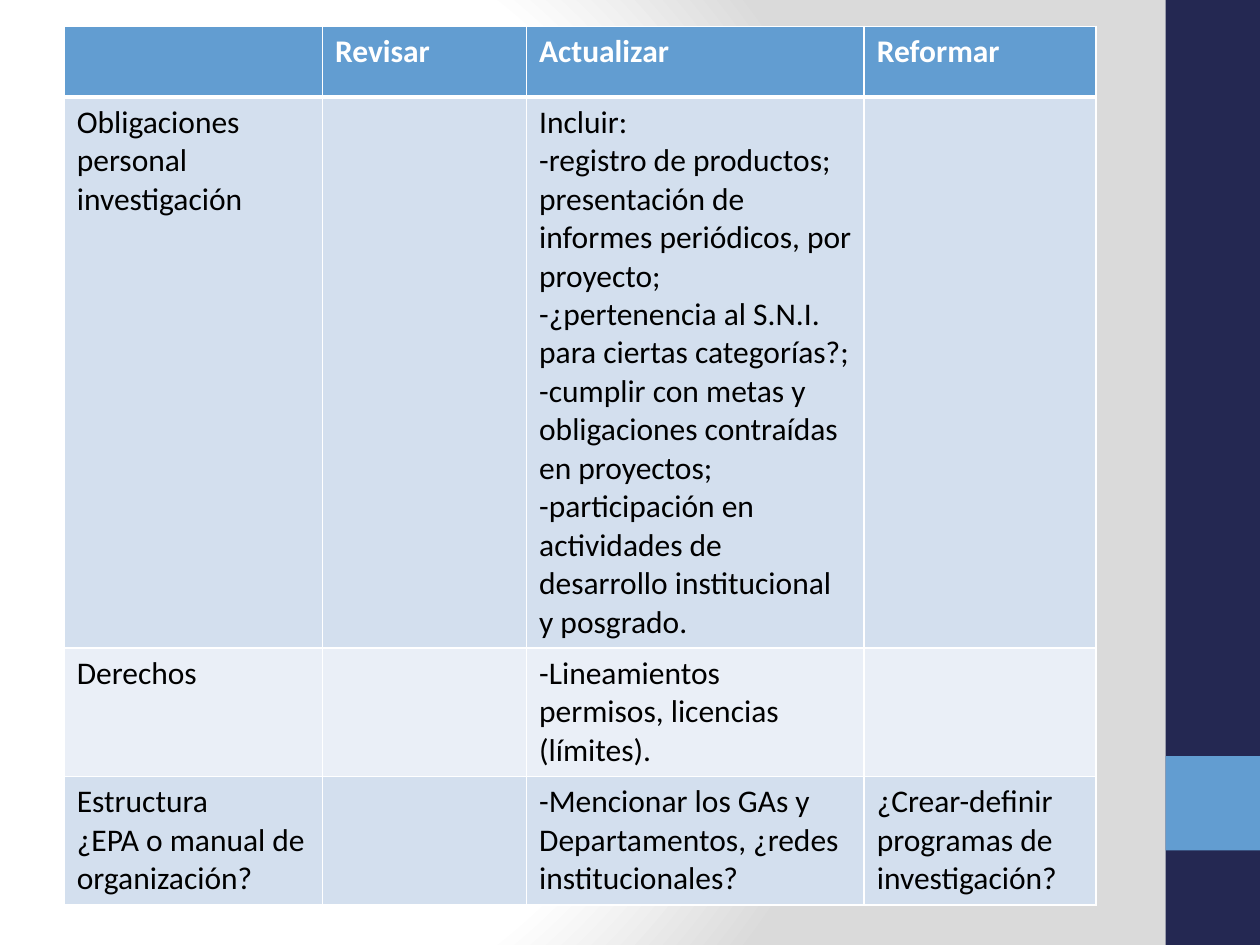
from pptx import Presentation
from pptx.dml.color import RGBColor
from pptx.enum.shapes import MSO_SHAPE
from pptx.oxml import parse_xml
from pptx.oxml.ns import nsdecls
from pptx.util import Inches, Pt

RECTANGLE = MSO_SHAPE.RECTANGLE
NAVY = RGBColor(0x24, 0x28, 0x52)
BLUE = RGBColor(0x62, 0x9D, 0xD1)
BAND_DARK = RGBColor(0xD3, 0xDF, 0xEE)
BAND_LIGHT = RGBColor(0xEA, 0xEF, 0xF7)
WHITE = RGBColor(0xFF, 0xFF, 0xFF)
BLACK = RGBColor(0, 0, 0)
GREY = RGBColor(0xDA, 0xDA, 0xDA)

WIDTH, HEIGHT = 10, 7.5
BAR = 0.75
BARS = [(0, HEIGHT, NAVY), (HEIGHT - 2 * BAR, BAR, BLUE)]

LEFT, TOP = 0.51, 0.21
COLUMNS = [2.05, 1.62, 2.68, 1.84]
ROWS = [0.56, 3.78, 1.02, 1.02]
# Each cell is a list of paragraphs.
CELLS = [
    [[], ["Revisar"], ["Actualizar"], ["Reformar"]],
    [["Obligaciones personal investigación"], [],
     ["Incluir:",
      "-registro de productos; presentación de informes periódicos, por proyecto;",
      "-¿pertenencia al S.N.I. para ciertas categorías?;",
      "-cumplir con metas y obligaciones contraídas en proyectos;",
      "-participación en actividades de desarrollo institucional y posgrado."], []],
    [["Derechos"], [], ["-Lineamientos permisos, licencias (límites)."], []],
    [["Estructura", "¿EPA o manual de organización?"], [],
     ["-Mencionar los GAs y Departamentos, ¿redes institucionales?"],
     ["¿Crear-definir programas de investigación?"]],
]


def set_background(slide):
    stops = "".join(f'<a:gs pos="{pos * 1000}"><a:srgbClr val="{color}"/></a:gs>'
                    for pos, color in [(0, WHITE), (75, WHITE), (100, GREY)])
    slide.element.cSld.insert(0, parse_xml(
        f'<p:bg {nsdecls("p", "a")}><p:bgPr><a:gradFill rotWithShape="1">'
        f'<a:gsLst>{stops}</a:gsLst><a:path path="circle">'
        '<a:fillToRect l="20000" t="50000" r="100000" b="50000"/></a:path>'
        '</a:gradFill><a:effectLst/></p:bgPr></p:bg>'))


def add_bar(slide, top, height, color):
    sp = slide.shapes.add_shape(RECTANGLE, Inches(WIDTH - BAR), Inches(top),
                                Inches(BAR), Inches(height))
    sp.shadow.inherit = False
    sp.fill.solid()
    sp.fill.fore_color.rgb = color
    sp.line.fill.background()


def write(tf, paragraphs, color=BLACK, bold=False, size=18, font="Calibri"):
    for i, text in enumerate(paragraphs):
        p = tf.add_paragraph() if i else tf.paragraphs[0]
        r = p.add_run()
        r.text = text
        r.font.name, r.font.size, r.font.bold = font, Pt(size), bold
        r.font.color.rgb = color


def set_borders(cell, bottom=1, top=1):
    """Draw white borders; they must precede the fill in the cell's XML."""
    tcPr = cell._tc.get_or_add_tcPr()
    sides = [("lnL", 1), ("lnR", 1), ("lnT", top), ("lnB", bottom)]
    for i, (side, width) in enumerate(sides):
        tcPr.insert(i, parse_xml(
            f'<a:{side} {nsdecls("a")} w="{Pt(width)}"><a:solidFill>'
            f'<a:srgbClr val="{WHITE}"/></a:solidFill></a:{side}>'))


def add_grid(slide):
    table = slide.shapes.add_table(
        len(ROWS), len(COLUMNS), Inches(LEFT), Inches(TOP),
        Inches(sum(COLUMNS)), Inches(sum(ROWS))).table
    for column, width in zip(table.columns, COLUMNS):
        column.width = Inches(width)
    for i, (row, height) in enumerate(zip(table.rows, ROWS)):
        row.height = Inches(height)
        header = i == 0
        fill = BLUE if header else BAND_DARK if i % 2 else BAND_LIGHT
        for cell, paragraphs in zip(row.cells, CELLS[i]):
            cell.fill.solid()
            cell.fill.fore_color.rgb = fill
            set_borders(cell, bottom=3 if header else 1, top=3 if i == 1 else 1)
            write(cell.text_frame, paragraphs,
                  color=WHITE if header else BLACK, bold=header)


def main():
    prs = Presentation()
    prs.slide_width, prs.slide_height = Inches(WIDTH), Inches(HEIGHT)
    slide = prs.slides.add_slide(prs.slide_layouts[6])
    set_background(slide)
    for top, height, color in BARS:
        add_bar(slide, top, height, color)
    add_grid(slide)
    prs.save("out.pptx")


if __name__ == "__main__":
    main()
